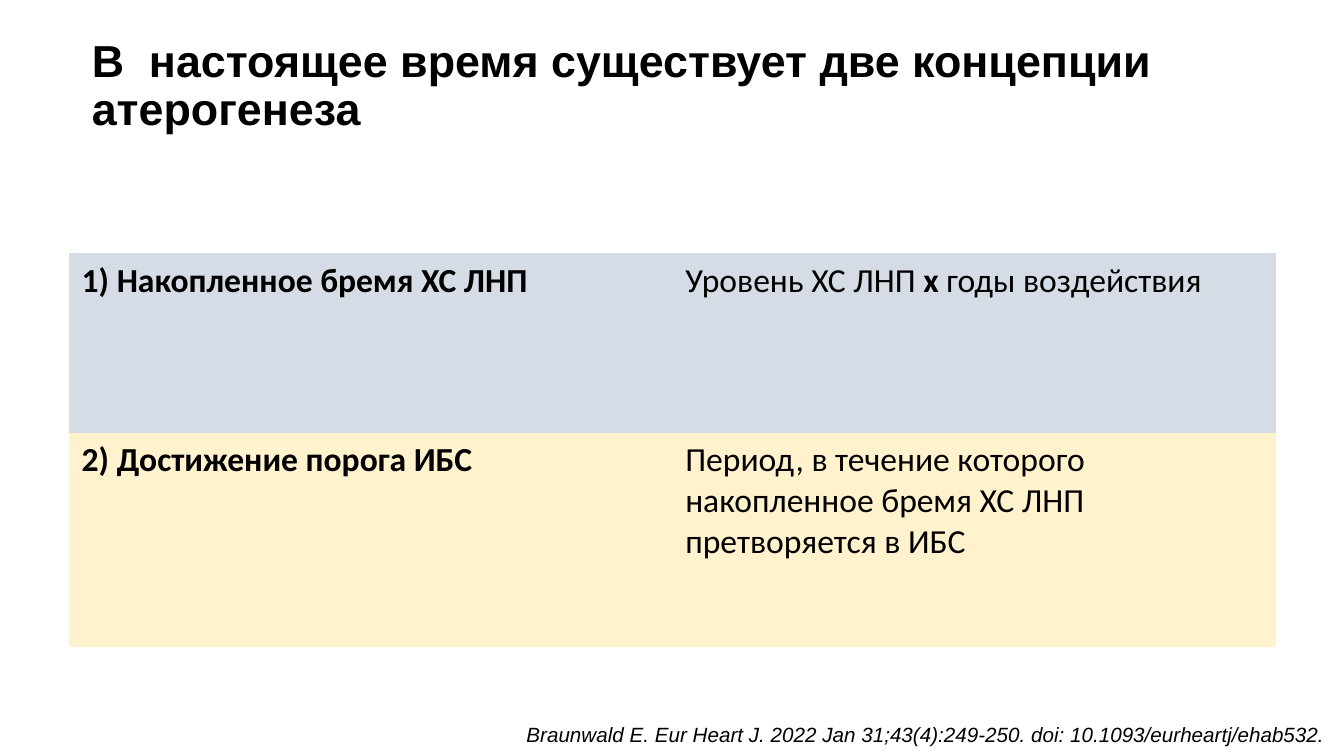
from dataclasses import dataclass

from pptx import Presentation
from pptx.dml.color import RGBColor
from pptx.enum import text as t
from pptx.oxml import ns
from pptx.util import Cm, Pt

BLACK = RGBColor(0x00, 0x00, 0x00)
BLUE_GREY = RGBColor(0xD6, 0xDC, 0xE5)
CREAM = RGBColor(0xFF, 0xF2, 0xCC)
NO_GRID_STYLE = "{2D5ABB26-0587-4C30-8999-92F81FD0307C}"
TITLE_LAYOUT = 5


@dataclass(frozen=True)
class Span:
    text: str
    bold: bool = False


@dataclass(frozen=True)
class Concept:
    name: Span
    meaning: tuple[Span, ...]
    height: float
    fill: RGBColor


CONCEPTS = (
    Concept(
        Span("1) Накопленное бремя ХС ЛНП", bold=True),
        (Span("Уровень ХС ЛНП "), Span("х", bold=True), Span(" годы воздействия")),
        4.52,
        BLUE_GREY,
    ),
    Concept(
        Span("2) Достижение порога ИБС", bold=True),
        (Span("Период, в течение которого накопленное бремя ХС ЛНП претворяется в ИБС"),),
        5.41,
        CREAM,
    ),
)
COLUMN_WIDTH = 15.21


def add_span(para, span: Span, font: str, size: float, italic: bool = False) -> None:
    run = para.add_run()
    run.text = span.text
    run.font.name = font
    run.font.size = Pt(size)
    run.font.bold = span.bold
    run.font.italic = italic
    run.font.color.rgb = BLACK


def fill_cell(cell, spans: tuple[Span, ...], fill: RGBColor) -> None:
    cell.fill.solid()
    cell.fill.fore_color.rgb = fill
    cell.margin_left = cell.margin_right = Cm(0.33)
    cell.margin_top = cell.margin_bottom = Cm(0.18)
    for span in spans:
        add_span(cell.text_frame.paragraphs[0], span, "Calibri", 24)


def add_title(page) -> None:
    title = page.shapes.title
    title.left, title.top, title.width, title.height = Cm(2.06), Cm(1.52), Cm(30.43), Cm(1.35)
    frame = title.text_frame
    frame.word_wrap = True
    frame.auto_size = t.MSO_AUTO_SIZE.NONE
    frame.vertical_anchor = t.MSO_ANCHOR.MIDDLE
    para = frame.paragraphs[0]
    para.alignment = t.PP_ALIGN.LEFT
    para.line_spacing = 0.9
    add_span(para, Span("В  настоящее время существует две концепции атерогенеза", bold=True), "Arial", 32)


def add_concepts(page) -> None:
    height = sum(concept.height for concept in CONCEPTS)
    frame = page.shapes.add_table(
        len(CONCEPTS), 2, Cm(1.73), Cm(6.38), Cm(2 * COLUMN_WIDTH), Cm(height)
    )
    table = frame.table
    table.first_row = table.horz_banding = False
    table._tbl.tblPr.find(ns.qn("a:tableStyleId")).text = NO_GRID_STYLE
    for column in table.columns:
        column.width = Cm(COLUMN_WIDTH)
    for row, concept in zip(table.rows, CONCEPTS):
        row.height = Cm(concept.height)
        for cell, spans in zip(row.cells, ((concept.name,), concept.meaning)):
            fill_cell(cell, spans, concept.fill)


def add_citation(page) -> None:
    box = page.shapes.add_textbox(Cm(12.95), Cm(18.06), Cm(20.83), Cm(0.89))
    frame = box.text_frame
    frame.word_wrap = False
    frame.auto_size = t.MSO_AUTO_SIZE.SHAPE_TO_FIT_TEXT
    para = frame.paragraphs[0]
    para.alignment = t.PP_ALIGN.RIGHT
    citation = Span("Braunwald E. Eur Heart J. 2022 Jan 31;43(4):249-250. doi: 10.1093/eurheartj/ehab532. ")
    add_span(para, citation, "Arial", 14.7, italic=True)


def main() -> None:
    deck = Presentation()
    deck.slide_width, deck.slide_height = Cm(33.87), Cm(19.05)
    page = deck.slides.add_slide(deck.slide_layouts[TITLE_LAYOUT])

    # Heading
    add_title(page)
    # Two concepts, one per row
    add_concepts(page)
    # Source of the data
    add_citation(page)

    deck.save("out.pptx")


if __name__ == "__main__":
    main()
